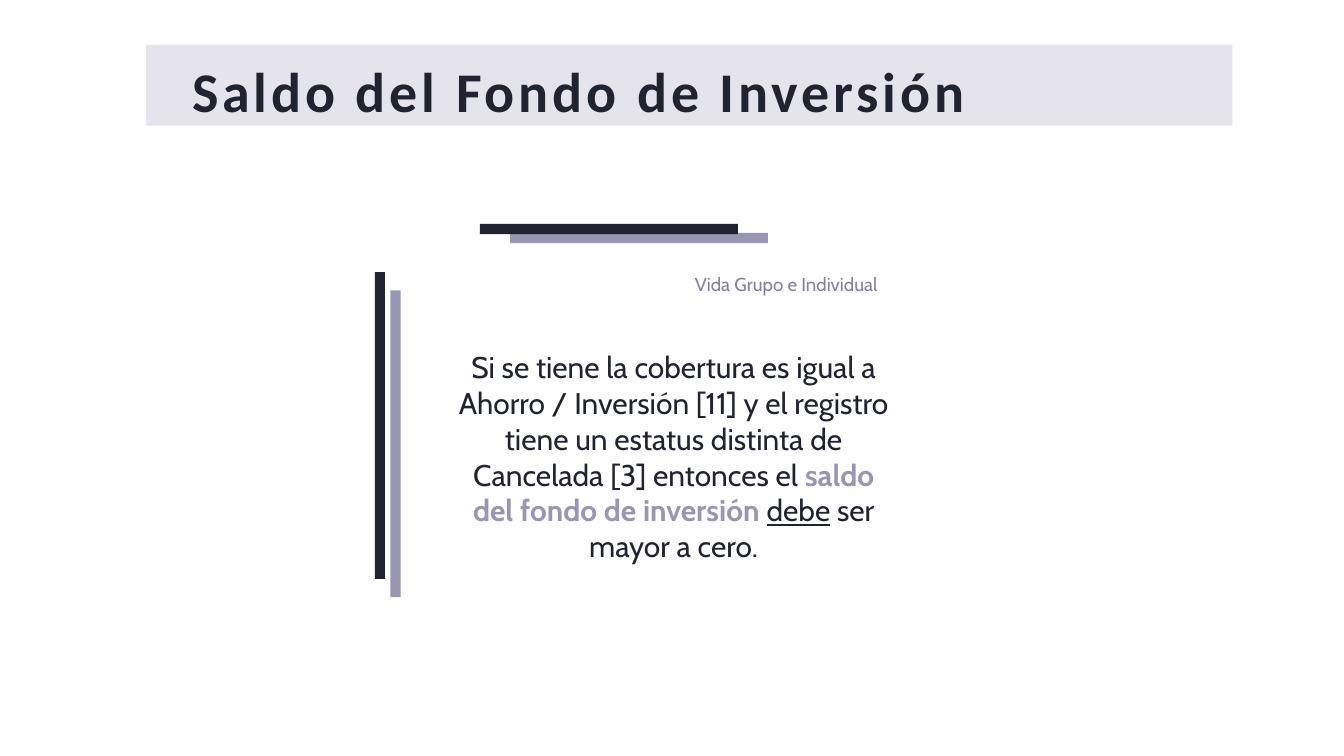
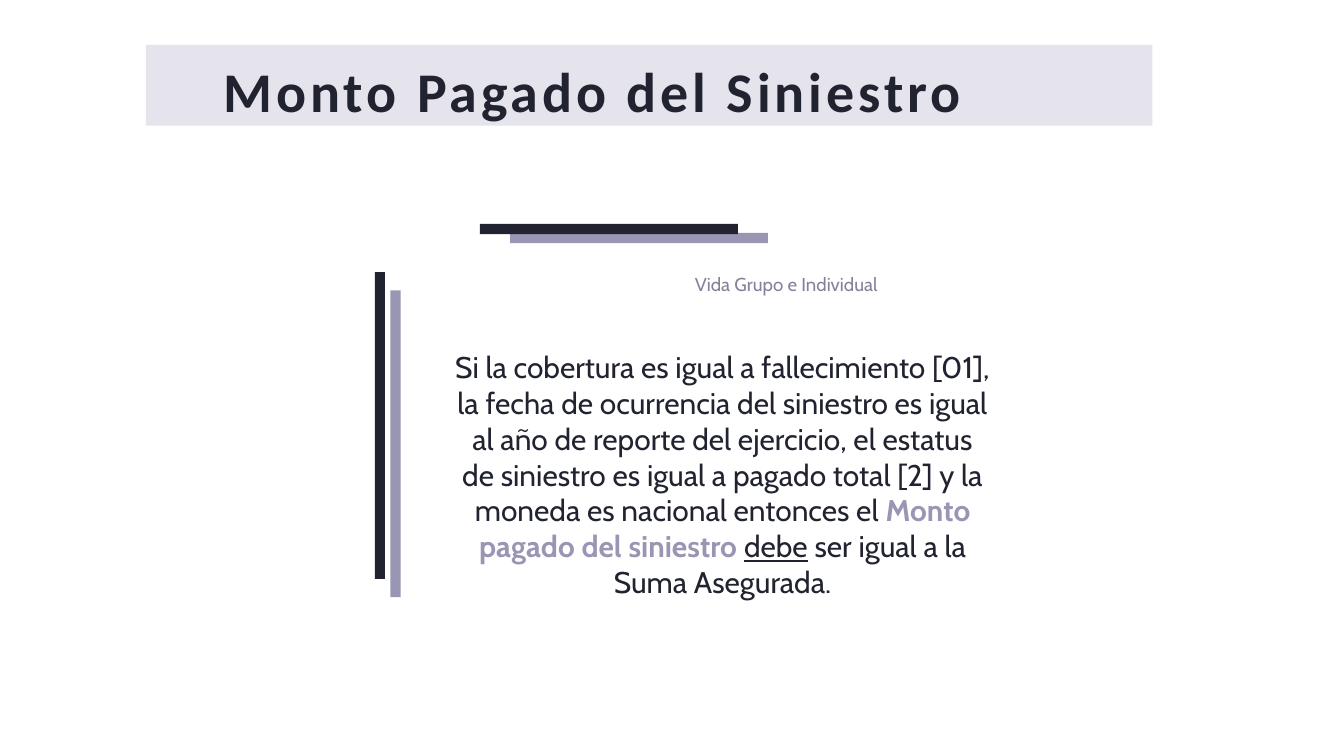
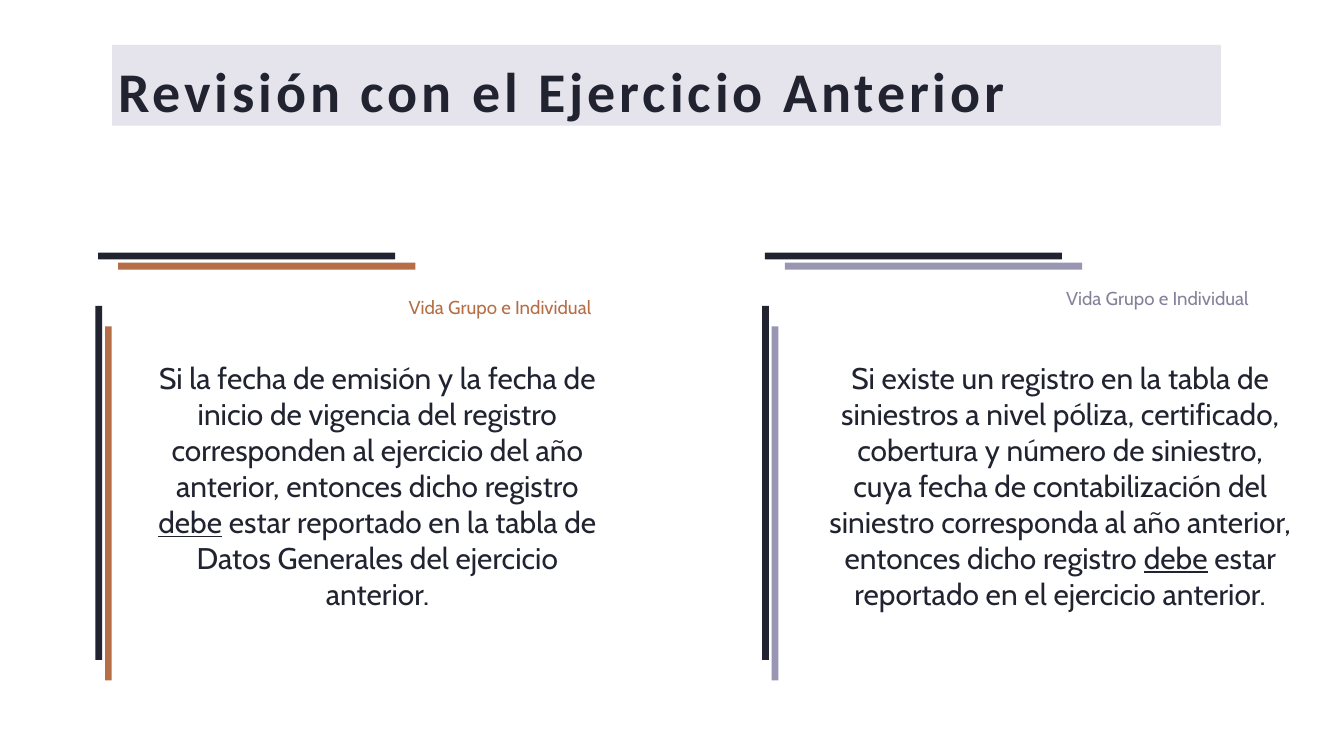
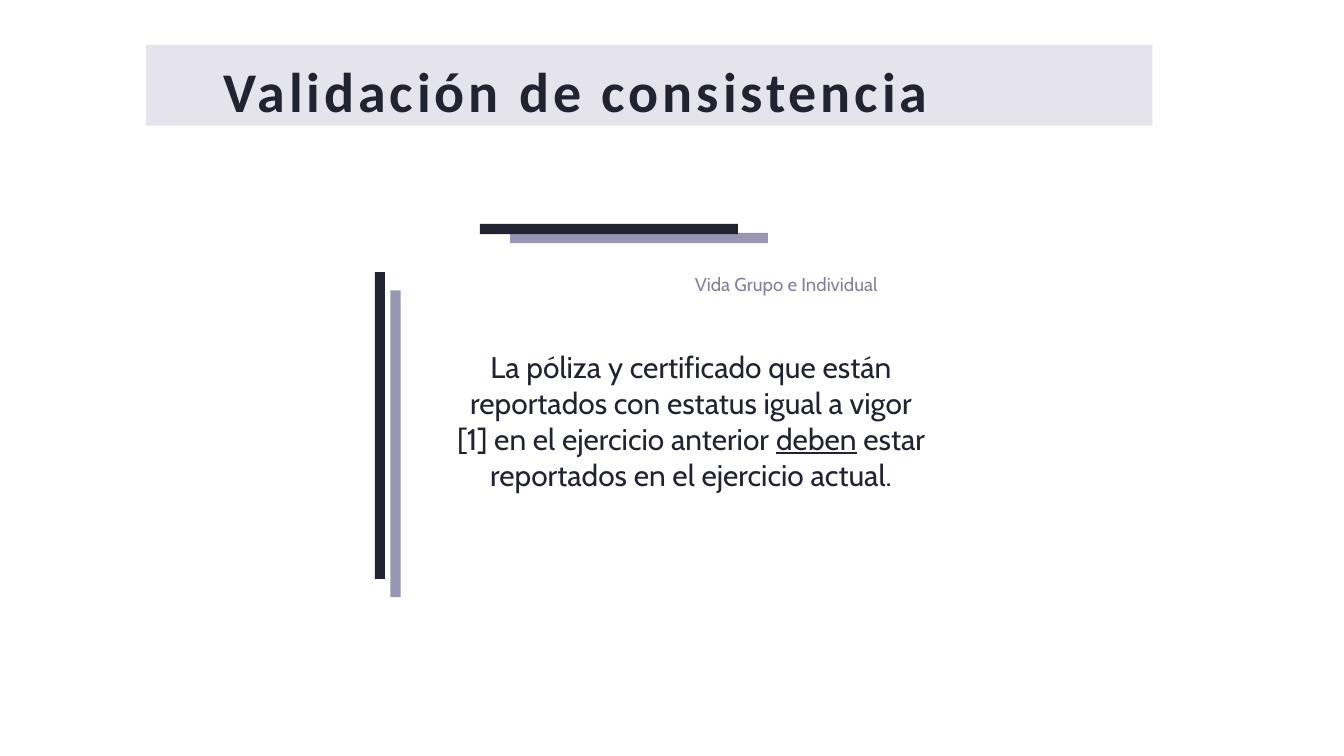
from lxml.etree import SubElement
from pptx import Presentation
from pptx.dml.color import RGBColor
from pptx.enum.shapes import MSO_SHAPE
from pptx.enum.text import MSO_AUTO_SIZE, PP_ALIGN
from pptx.oxml.ns import qn
from pptx.util import Cm, Pt

HUES = {"ink": "212430", "lilac": "9996B4", "gray": "84829B", "rust": "B56E46"}

TITLE = {"name": "Calibri", "size": Pt(60), "bold": True}
TAG = {"name": "Cabin", "size": Pt(20)}
BODY = {"name": "Cabin", "size": Pt(32)}
KEY = {**BODY, "bold": True}
MUST = {**BODY, "underline": True}
FRAME = {
    "margin_left": 0, "margin_top": 0, "margin_right": 0, "margin_bottom": 0,
    "word_wrap": True, "auto_size": MSO_AUTO_SIZE.SHAPE_TO_FIT_TEXT,
}

SMALL = {
    "up": (14.17, 10.29, 0.38, 11.59), "up_gap": (0.59, 0.69),
    "flat": (18.14, 8.46, 9.75, 0.39), "flat_gap": (1.14, 0.34),
}
LARGE = {
    "up": (3.61, 11.56, 0.25, 13.38), "up_gap": (0.36, 0.78),
    "flat": (3.71, 9.55, 11.23, 0.26), "flat_gap": (0.76, 0.38),
}
CARD = {"bars": SMALL, "shift": 0, "hue": "lilac", "label": "gray",
        "tag": (23.29, 10.36, 9.88, 0.79)}

PAGES = [
    {
        "title": "Saldo del Fondo de Inversión",
        "band": (5.51, 41.07), "head": (7.26, 2.57, 36.27, 2.1),
        "cards": [{**CARD, "box": (17.17, 13.18, 16.59, 9.58), "runs": [
            ("Si se tiene la cobertura es igual a Ahorro / Inversión [11] y el "
             "registro tiene un estatus distinta de Cancelada [3] entonces el ", BODY, "ink"),
            ("saldo del fondo de inversión ", KEY, "lilac"),
            ("debe", MUST, "ink"),
            (" ser mayor a cero.", BODY, "ink"),
        ]}],
    },
    {
        "title": "Monto Pagado del Siniestro",
        "band": (5.51, 38.05), "head": (8.46, 2.59, 36.27, 2.1),
        "cards": [{**CARD, "box": (17.17, 13.18, 20.29, 10.95), "runs": [
            ("Si la cobertura es igual a fallecimiento [01], la fecha de ocurrencia "
             "del siniestro es igual al año de reporte del ejercicio, el estatus de "
             "siniestro es igual a pagado total [2] y la moneda es nacional "
             "entonces el ", BODY, "ink"),
            ("Monto pagado del siniestro ", KEY, "lilac"),
            ("debe", MUST, "ink"),
            (" ser igual a la Suma Asegurada.", BODY, "ink"),
        ]}],
    },
    {
        "title": "Revisión con el Ejercicio Anterior",
        "band": (4.24, 41.91), "head": (4.47, 2.57, 42.11, 2.1),
        "cards": [
            {"bars": LARGE, "shift": 0, "hue": "rust", "label": "rust",
             "tag": (13.54, 11.25, 8.81, 0.79), "box": (5.38, 13.61, 17.78, 9.58), "runs": [
                 ("Si la fecha de emisión y la fecha de inicio de vigencia del registro "
                  "corresponden al ejercicio del año anterior, entonces dicho "
                  "registro ", BODY, "ink"),
                 ("debe", MUST, "ink"),
                 (" estar reportado en la tabla de Datos Generales del ejercicio "
                  "anterior.", BODY, "ink"),
             ]},
            {"bars": LARGE, "shift": 25.2, "hue": "lilac", "label": "gray",
             "tag": (36.96, 10.92, 10.24, 0.79), "box": (31.19, 13.61, 17.78, 12.32), "runs": [
                 ("Si existe un registro en la tabla de siniestros a nivel póliza, "
                  "certificado, cobertura y número de siniestro, cuya fecha de "
                  "contabilización del siniestro corresponda al año anterior, "
                  "entonces dicho registro ", BODY, "ink"),
                 ("debe", MUST, "ink"),
                 (" estar reportado en el ejercicio anterior.", BODY, "ink"),
             ]},
        ],
    },
    {
        "title": "Validación de consistencia",
        "band": (5.51, 38.05), "head": (8.46, 2.59, 36.27, 2.1),
        "cards": [{**CARD, "box": (17.17, 13.18, 17.91, 6.83), "runs": [
            ("La póliza y certificado que están reportados con estatus igual a "
             "vigor [1] en el ejercicio anterior ", BODY, "ink"),
            ("deben", MUST, "ink"),
            (" estar reportados en el ejercicio actual.", BODY, "ink"),
        ]}],
    },
]


def add_bar(slide, at, hue):
    bar = slide.shapes.add_shape(MSO_SHAPE.RECTANGLE, *map(Cm, at))
    bar.shadow.inherit = False
    bar.fill.solid()
    bar.fill.fore_color.rgb = RGBColor.from_string(HUES[hue])
    bar.line.fill.background()
    return bar


def add_text(slide, at, runs, align, lead=None):
    frame = slide.shapes.add_textbox(*map(Cm, at)).text_frame
    for name, value in FRAME.items():
        setattr(frame, name, value)
    para = frame.paragraphs[0]
    para.alignment = align
    if lead:
        para.line_spacing = Pt(lead)
    for words, style, hue in runs:
        run = para.add_run()
        run.text = words
        for name, value in style.items():
            setattr(run.font, name, value)
        run.font.color.rgb = RGBColor.from_string(HUES[hue])
    return para


deck = Presentation()
deck.slide_width = Cm(50.8)
deck.slide_height = deck.slide_width * 9 // 16

for page in PAGES:
    slide = deck.slides.add_slide(deck.slide_layouts[6])

    left, width = page["band"]
    band = add_bar(slide, (left, 1.7, width, 3.05), "lilac")
    tint = band.fill._xPr.find(qn("a:solidFill"))[0]
    SubElement(tint, qn("a:alpha"), val="25000")
    head = add_text(slide, page["head"], [(page["title"], TITLE, "ink")], PP_ALIGN.LEFT, 59.4)
    head.runs[0].font._element.set("spc", "420")

    for card in page["cards"]:
        for side in ("up", "flat"):
            left, top, width, height = card["bars"][side]
            left += card["shift"]
            dx, dy = card["bars"][side + "_gap"]
            add_bar(slide, (left + dx, top + dy, width, height), card["hue"])
            add_bar(slide, (left, top, width, height), "ink")
        label = [("Vida Grupo e Individual", TAG, card["label"])]
        add_text(slide, card["tag"], label, PP_ALIGN.RIGHT, 22.2)
        add_text(slide, card["box"], card["runs"], PP_ALIGN.CENTER)

deck.save("out.pptx")
